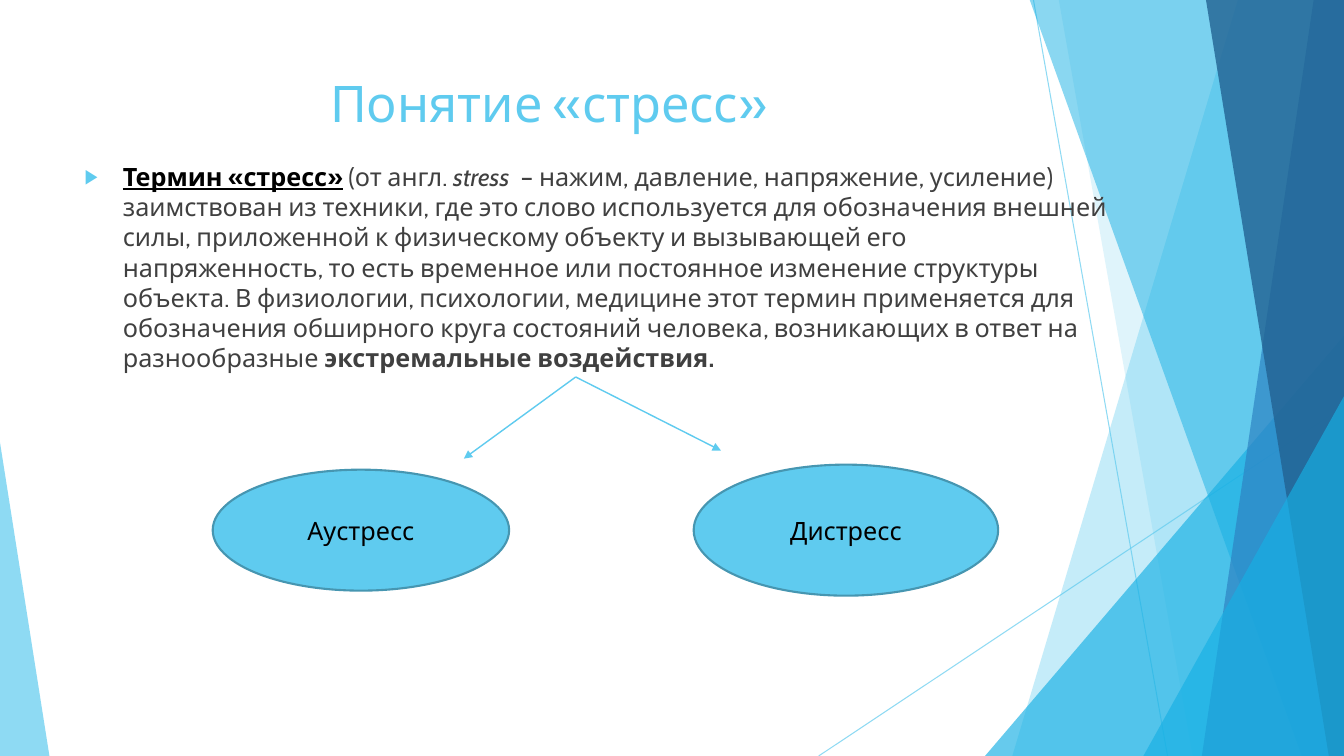
from lxml.etree import SubElement
from pptx import Presentation
from pptx.dml.color import RGBColor
from pptx.enum.shapes import MSO_CONNECTOR, MSO_SHAPE
from pptx.enum.text import MSO_ANCHOR, PP_ALIGN
from pptx.oxml.ns import qn
from pptx.util import Inches, Pt

WIDTH, HEIGHT, BAND_TOP = 13.33, 7.5, -0.01
FONT = "Cabin"
COLORS = {
    "sky": "5FCBEF",
    "cyan": "17B0E4",
    "blue": "2E83C3",
    "navy": "226292",
    "outline": "4696B1",
    "body": "404040",
    "black": "000000",
}
DEFINITION = [
    ("Термин «стресс»", "black", {"bold": True, "underline": True}),
    (" (от англ. ", "body", {}),
    ("stress ", "body", {"italic": True}),
    (" – нажим, давление, напряжение, усиление) заимствован из техники, "
     "где это слово используется для обозначения внешней силы, приложенной "
     "к физическому объекту и вызывающей его напряженность, то есть "
     "временное или постоянное изменение структуры объекта. В физиологии, "
     "психологии, медицине этот термин применяется для обозначения "
     "обширного круга состояний человека, возникающих в ответ на "
     "разнообразные ", "body", {}),
    ("экстремальные воздействия.", "body", {"bold": True}),
]


def rgb(color):
    return RGBColor.from_string(COLORS[color])


def set_opacity(fill_parent, percent):
    color = fill_parent.find(qn("a:solidFill"))[0]
    SubElement(color, qn("a:alpha"), val=str(percent * 1000))


def fill_facet(facet, color, opacity):
    facet.shadow.inherit = False
    facet.fill.solid()
    facet.fill.fore_color.rgb = rgb(color)
    facet.line.fill.background()
    set_opacity(facet._element.spPr, opacity)


def add_band(slide, top_left, bottom_left, color, opacity):
    outline = slide.shapes.build_freeform(Inches(top_left), Inches(BAND_TOP))
    corners = [(WIDTH, BAND_TOP), (WIDTH, HEIGHT), (bottom_left, HEIGHT)]
    outline.add_line_segments([(Inches(x), Inches(y)) for x, y in corners])
    fill_facet(outline.convert_to_shape(), color, opacity)


def add_corner(slide, left, top, width, apex, color, opacity):
    corner = slide.shapes.add_shape(
        MSO_SHAPE.ISOSCELES_TRIANGLE, Inches(left), Inches(top),
        Inches(width), Inches(HEIGHT - top))
    corner.adjustments[0] = apex
    fill_facet(corner, color, opacity)


def add_line(slide, start, end, width, opacity=100, arrow=False):
    line = slide.shapes.add_connector(
        MSO_CONNECTOR.STRAIGHT, *(Inches(v) for v in start + end))
    line.line.color.rgb = rgb("sky")
    line.line.width = Pt(width)
    outline = line.line._get_or_add_ln()
    if opacity < 100:
        set_opacity(outline, opacity)
    if arrow:
        SubElement(outline, qn("a:tailEnd"), type="triangle")
    SubElement(line._element.spPr, qn("a:effectLst"))


def format_run(run, size, color, bold=None, italic=None, underline=None):
    font = run.font
    font.name, font.size, font.color.rgb = FONT, Pt(size), rgb(color)
    font.bold, font.italic, font.underline = bold, italic, underline


def add_text_frame(slide, left, top, width, height):
    frame = slide.shapes.add_textbox(
        Inches(left), Inches(top), Inches(width), Inches(height)).text_frame
    frame.word_wrap = True
    return frame


def set_centred_text(frame, text, size, color):
    paragraph = frame.paragraphs[0]
    paragraph.text = text
    paragraph.alignment = PP_ALIGN.CENTER
    format_run(paragraph.runs[0], size, color)


def add_bullet(paragraph):
    properties = paragraph._p.get_or_add_pPr()
    indent = Inches(0.38)
    properties.set("marL", str(indent))
    properties.set("indent", str(-indent))
    bullet_color = SubElement(properties, qn("a:buClr"))
    SubElement(bullet_color, qn("a:srgbClr"), val=COLORS["sky"])
    SubElement(properties, qn("a:buSzPct"), val="80000")
    SubElement(properties, qn("a:buFont"), typeface=FONT)
    SubElement(properties, qn("a:buChar"), char="▶")


def add_definition(slide):
    paragraph = add_text_frame(slide, 0.74, 1.55, 10.35, 2.61).paragraphs[0]
    paragraph.line_spacing = 1.0
    add_bullet(paragraph)
    for text, color, style in DEFINITION:
        run = paragraph.add_run()
        run.text = text
        format_run(run, 18, color, **style)


def add_stress_type(slide, text, left, top, width, height):
    oval = slide.shapes.add_shape(
        MSO_SHAPE.OVAL, Inches(left), Inches(top),
        Inches(width), Inches(height))
    oval.shadow.inherit = False
    oval.fill.solid()
    oval.fill.fore_color.rgb = rgb("sky")
    oval.line.color.rgb = rgb("outline")
    oval.line.width = Pt(1.5)
    oval.text_frame.vertical_anchor = MSO_ANCHOR.MIDDLE
    set_centred_text(oval.text_frame, text, 18, "black")


def add_backdrop(slide):
    add_line(slide, (10.25, 0), (11.58, HEIGHT), 0.75, 70)
    add_line(slide, (WIDTH, 4.03), (8.12, HEIGHT), 0.75, 70)
    add_band(slide, 12.28, 10.04, "sky", 36)
    add_band(slide, 10.5, 11.83, "sky", 20)
    add_corner(slide, 9.77, 3.33, 3.56, 1, "cyan", 66)
    add_band(slide, 10.21, 12.91, "cyan", 50)
    add_band(slide, 13.03, 11.92, "blue", 70)
    add_band(slide, 11.96, 13.18, "navy", 80)
    add_corner(slide, 11.34, 3.93, 1.99, 1, "cyan", 66)
    add_corner(slide, 0, 4.39, 0.49, 0, "sky", 70)


def main():
    deck = Presentation()
    deck.slide_width, deck.slide_height = Inches(WIDTH), Inches(HEIGHT)
    slide = deck.slides.add_slide(deck.slide_layouts[6])
    add_backdrop(slide)
    title = add_text_frame(slide, 0.74, 0.67, 9.4, 1.44)
    set_centred_text(title, "Понятие «стресс»", 36, "sky")
    add_definition(slide)
    add_stress_type(slide, "Аустресс", 2.11, 4.66, 2.94, 1.2)
    add_stress_type(slide, "Дистресс", 6.88, 4.61, 3.02, 1.3)
    for arrow_tip in [(4.6, 4.55), (7.15, 4.47)]:
        add_line(slide, (5.71, 3.74), arrow_tip, 1, arrow=True)
    deck.save("out.pptx")


if __name__ == "__main__":
    main()
